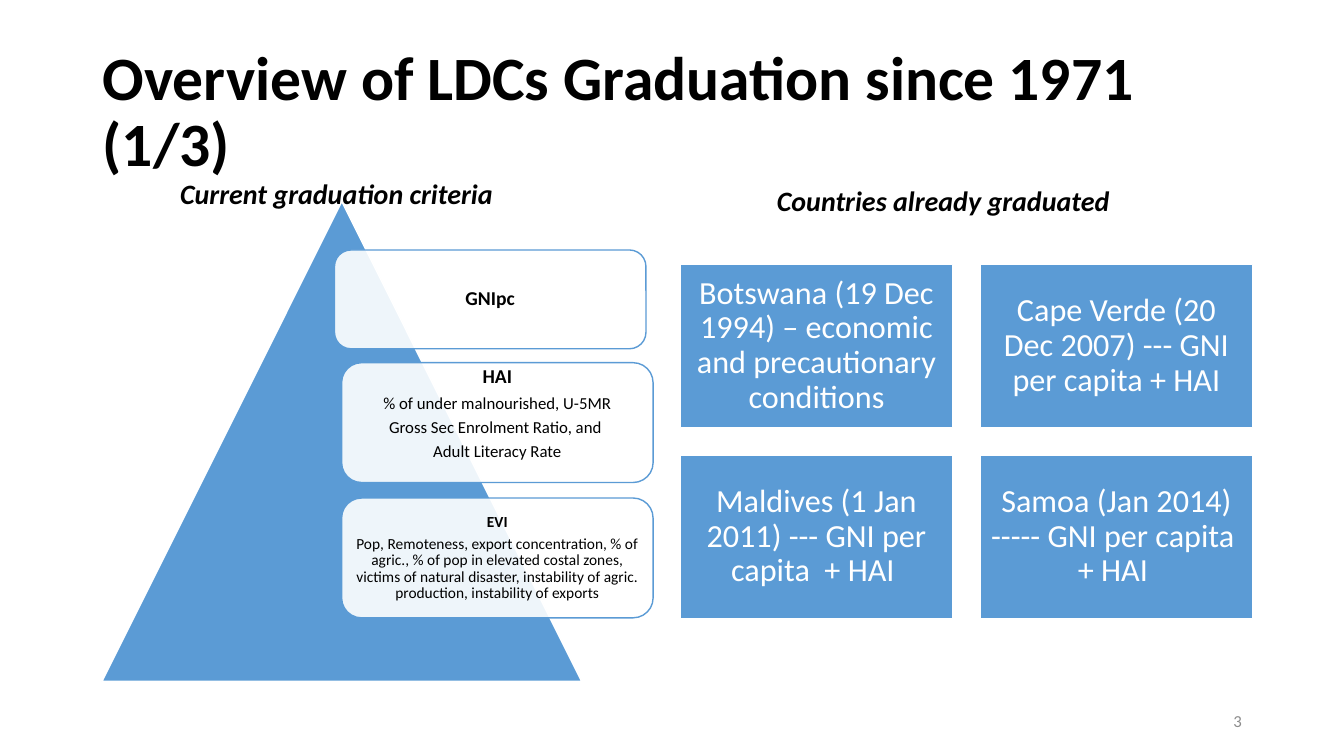
from dataclasses import dataclass

from lxml import etree
from pptx import Presentation
from pptx import util as u
from pptx.dml.color import RGBColor
from pptx.enum import shapes, text
from pptx.oxml.ns import qn


@dataclass(frozen=True)
class Theme:
    font: str = "Calibri"
    ink: str = "000000"
    paper: str = "FFFFFF"
    blue: str = "5B9BD5"
    grey: str = "8C8C8C"
    title: int = 44
    country: int = 23
    heading: int = 20
    label: int = 14
    detail: int = 12
    small: int = 11


def write(frame, content, size, color, bold=False, italic=False, align="LEFT",
          anchor="TOP", spacing=None, after=0, insets=(0.25, 0.13, 0.25, 0.13), new=False):
    if not new:
        frame.word_wrap = True
        frame.auto_size = text.MSO_AUTO_SIZE.NONE
        frame.vertical_anchor = text.MSO_ANCHOR[anchor]
        for side, inset in zip(("left", "top", "right", "bottom"), insets):
            setattr(frame, f"margin_{side}", u.Cm(inset))
    para = frame.add_paragraph() if new else frame.paragraphs[0]
    para.alignment = text.PP_ALIGN[align]
    para.line_spacing = spacing
    para.space_after = u.Pt(after)
    span = para.add_run()
    span.text = content
    span.font.name = THEME.font
    span.font.size = u.Pt(size)
    span.font.bold = bold
    span.font.italic = italic
    span.font.color.rgb = RGBColor.from_string(color)


class SlideBuilder:
    def __init__(self, deck, theme):
        self.theme = theme
        self.page = deck.slides.add_slide(deck.slide_layouts[5])

    def title(self, content, *place):
        box = self.page.shapes.title
        box.left, box.top, box.width, box.height = map(u.Cm, place)
        write(box.text_frame, content, self.theme.title, self.theme.ink,
              bold=True, anchor="MIDDLE", spacing=0.9)

    def label(self, content, *place, **style):
        box = self.page.shapes.add_textbox(*map(u.Cm, place))
        write(box.text_frame, content, **style)

    def shape(self, kind, *place, fill, line, opacity=None):
        box = self.page.shapes.add_shape(shapes.MSO_SHAPE[kind], *map(u.Cm, place))
        box.shadow.inherit = False
        box.fill.solid()
        box.fill.fore_color.rgb = RGBColor.from_string(fill)
        box.line.color.rgb = RGBColor.from_string(line)
        box.line.width = u.Pt(1)
        if opacity is not None:
            color = box._element.spPr.find(qn("a:solidFill"))[0]
            etree.SubElement(color, qn("a:alpha"), val=str(opacity * 1000))
        return box

    def country(self, content, *place):
        box = self.shape("RECTANGLE", *place, fill=self.theme.blue, line=self.theme.paper)
        write(box.text_frame, content, self.theme.country, self.theme.paper,
              align="CENTER", anchor="MIDDLE", spacing=0.9, insets=(0.25,) * 4)

    def criterion(self, name, details, *place, name_size, detail_size, insets):
        box = self.shape("ROUNDED_RECTANGLE", *place, fill=self.theme.paper,
                         line=self.theme.blue, opacity=90)
        for index, content in enumerate([name, *details]):
            size = detail_size if index else name_size
            write(box.text_frame, content, size, self.theme.ink, bold=index == 0,
                  align="CENTER", anchor="MIDDLE", spacing=0.9,
                  after=size * 0.35 if index < len(details) else 0,
                  insets=insets, new=index > 0)


THEME = Theme()

COUNTRIES = [
    "Botswana (19 Dec 1994) – economic and precautionary conditions",
    "Cape Verde (20 Dec 2007) --- GNI per capita + HAI",
    "Maldives (1 Jan 2011) --- GNI per capita  + HAI ",
    "Samoa (Jan 2014) ----- GNI per capita  + HAI ",
]

HAI_DETAILS = [
    "% of under malnourished, U-5MR",
    "Gross Sec Enrolment Ratio, and ",
    "Adult Literacy Rate",
]

EVI_DETAILS = [
    "Pop, Remoteness, export concentration, % of agric., % of pop in elevated "
    "costal zones, victims of natural disaster, instability of agric. "
    "production, instability of exports",
]


def main():
    deck = Presentation()
    deck.slide_width, deck.slide_height = u.Cm(33.87), u.Cm(19.05)
    slide = SlideBuilder(deck, THEME)
    slide.title("Overview of LDCs Graduation since 1971 (1/3)", 2.34, 1.02, 29.21, 3.68)

    card_width, card_height, gap = 6.86, 4.11, 0.7
    for index, country in enumerate(COUNTRIES):
        row, column = divmod(index, 2)
        slide.country(country, 17.15 + column * (card_width + gap),
                      6.66 + row * (card_height + gap), card_width, card_height)

    slide.shape("ISOSCELES_TRIANGLE", 2.57, 5.08, 12.09, 12.09,
                fill=THEME.blue, line=THEME.paper)
    slide.criterion("GNIpc", [], 8.43, 6.3, 7.85, 2.49, name_size=THEME.label,
                    detail_size=THEME.detail, insets=(0.15,) * 4)
    slide.criterion("HAI", HAI_DETAILS, 8.61, 9.14, 7.85, 3.02, name_size=THEME.label,
                    detail_size=THEME.detail, insets=(0.15, 0, 0.15, 0.43))
    slide.criterion("EVI", EVI_DETAILS, 8.61, 12.55, 7.85, 3.02, name_size=THEME.small,
                    detail_size=THEME.small, insets=(0.13,) * 4)

    for heading, left, top in [("Current graduation criteria", 4.29, 4.32),
                               ("Countries already graduated", 19.33, 4.5)]:
        slide.label(heading, left, top, 13.08, 1.12, size=THEME.heading,
                    color=THEME.ink, bold=True, italic=True)
    slide.label("3", 23.93, 17.65, 7.62, 1.02, size=THEME.detail, color=THEME.grey,
                align="RIGHT", anchor="MIDDLE")
    deck.save("out.pptx")


if __name__ == "__main__":
    main()
